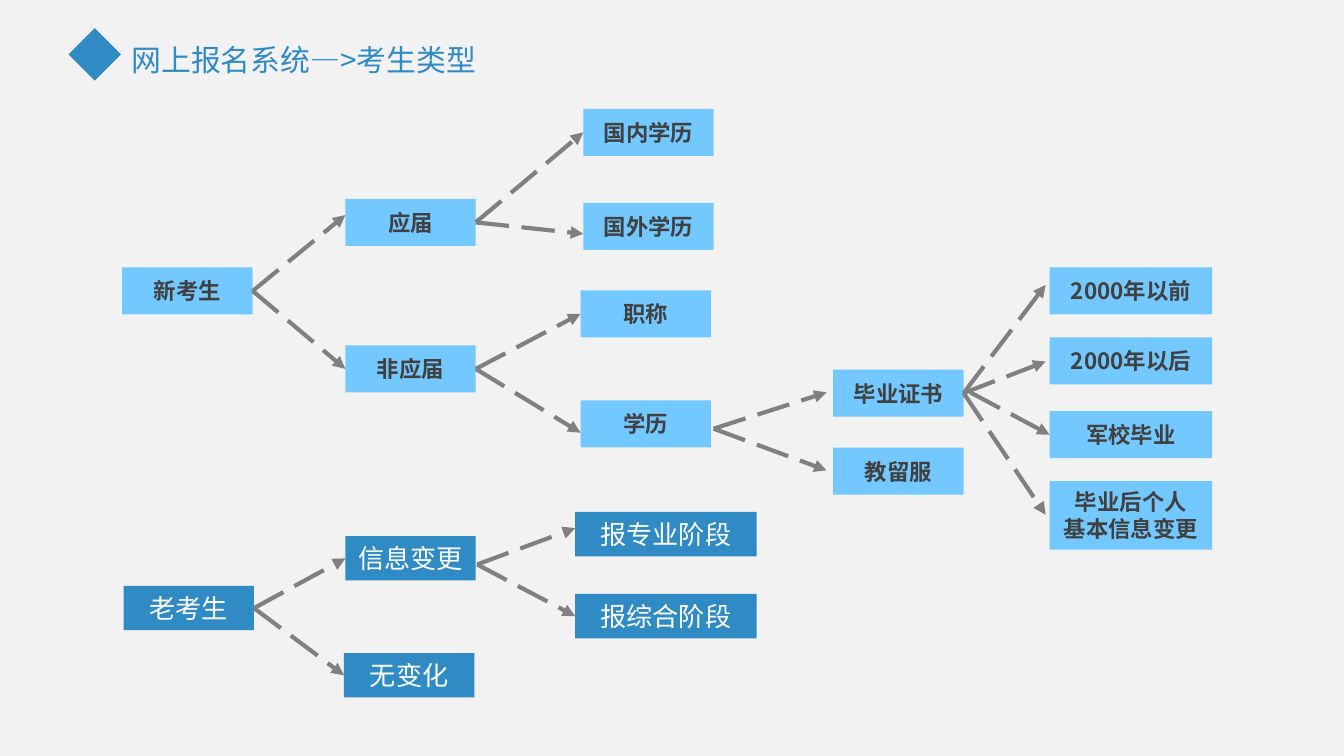
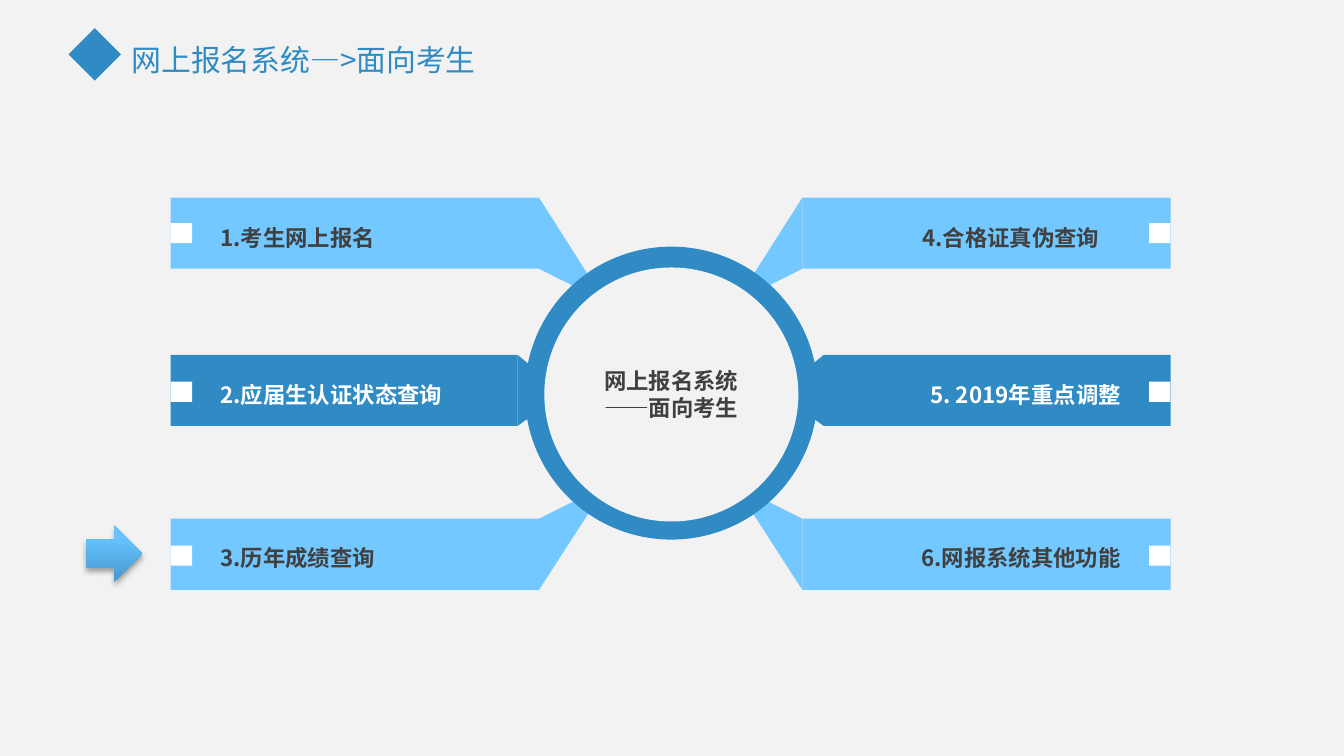
"""Build two slides on the online registration system: candidate types and functions."""
from copy import deepcopy

from lxml.etree import SubElement
from pptx import Presentation
from pptx.dml.color import RGBColor
from pptx.enum.dml import MSO_LINE
from pptx.enum.shapes import MSO_CONNECTOR, MSO_SHAPE
from pptx.enum.text import MSO_ANCHOR, MSO_AUTO_SIZE, PP_ALIGN
from pptx.oxml.ns import qn
from pptx.util import Pt

PX = 4572
DARK_BLUE = RGBColor(0x30, 0x8B, 0xC4)
LIGHT_BLUE = RGBColor(0x73, 0xC8, 0xFF)
PALE = RGBColor(0xF2, 0xF2, 0xF2)
INK = RGBColor(0x40, 0x40, 0x40)
GREY = RGBColor(0x80, 0x80, 0x80)
WHITE = RGBColor(0xFF, 0xFF, 0xFF)
ARROW_BOTTOM = RGBColor(0x46, 0x99, 0xCE)
ARROW_MIDDLE = RGBColor(0x68, 0xC3, 0xFF)
ARROW_TOP = RGBColor(0x69, 0xC4, 0xFF)
CJK = "Noto Sans CJK SC"
LATIN = "Calibri"


def add_box(shapes, kind, box, color):
    shape = shapes.add_shape(kind, *(PX * value for value in box))
    shape.fill.solid()
    shape.fill.fore_color.rgb = color
    shape.line.fill.background()
    shape.shadow.inherit = False
    return shape


def write(shape, text, color, size=12, bold=True, font=CJK, align=PP_ALIGN.CENTER,
          anchor=MSO_ANCHOR.MIDDLE, insets=(14, 8, 14, 8), before=0):
    frame = shape.text_frame
    frame.word_wrap = True
    frame.vertical_anchor = anchor
    (frame.margin_left, frame.margin_top,
     frame.margin_right, frame.margin_bottom) = (PX * inset for inset in insets)
    for index, line in enumerate(text.split("\n")):
        paragraph = frame.add_paragraph() if index else frame.paragraphs[0]
        paragraph.alignment = align
        paragraph.space_before = Pt(before)
        run = paragraph.add_run()
        run.text = line
        run.font.name = font
        run.font.size = Pt(size)
        run.font.bold = bold
        run.font.color.rgb = color
        SubElement(run.font._element, qn("a:ea"), typeface=CJK)


presentation = Presentation()
presentation.slide_width = 2000 * PX
presentation.slide_height = 1125 * PX

slides = []
for title, title_width in [("网上报名系统—>考生类型", 630), ("网上报名系统—>面向考生", 786)]:
    slide = presentation.slides.add_slide(presentation.slide_layouts[6])
    slide.background.fill.solid()
    slide.background.fill.fore_color.rgb = PALE
    add_box(slide.shapes, MSO_SHAPE.DIAMOND, (102, 42, 78, 78), DARK_BLUE)
    title_box = slide.shapes.add_textbox(182 * PX, 54 * PX, title_width * PX, 68 * PX)
    write(title_box, title, DARK_BLUE, size=16, bold=False, align=PP_ALIGN.LEFT,
          anchor=MSO_ANCHOR.TOP)
    title_box.text_frame.auto_size = MSO_AUTO_SIZE.SHAPE_TO_FIT_TEXT
    slides.append(slide)
types_slide, functions_slide = slides

new_candidate_nodes = [
    ("新考生", 182, 398, 194, 70),
    ("应届", 514, 296, 194, 70),
    ("非应届", 514, 514, 194, 70),
    ("国内学历", 868, 162, 194, 70),
    ("国外学历", 868, 302, 194, 70),
    ("职称", 864, 432, 194, 70),
    ("学历", 864, 596, 194, 70),
    ("毕业证书", 1240, 550, 194, 70),
    ("教留服", 1240, 666, 194, 70),
    ("2000年以前", 1562, 398, 242, 70),
    ("2000年以后", 1562, 502, 242, 70),
    ("军校毕业", 1562, 612, 242, 70),
    ("毕业后个人\n基本信息变更", 1562, 716, 242, 102),
]
returning_candidate_nodes = [
    ("老考生", 184, 872, 194, 66),
    ("信息变更", 514, 798, 194, 66),
    ("无变化", 512, 972, 194, 66),
    ("报专业阶段", 856, 762, 270, 66),
    ("报综合阶段", 856, 884, 270, 66),
]
nodes = []
for text, *box in new_candidate_nodes:
    node = add_box(types_slide.shapes, MSO_SHAPE.RECTANGLE, box, LIGHT_BLUE)
    write(node, text, INK)
    nodes.append(node)
for text, *box in returning_candidate_nodes:
    node = add_box(types_slide.shapes, MSO_SHAPE.RECTANGLE, box, DARK_BLUE)
    write(node, text, WHITE, size=14, bold=False, font=LATIN)
    nodes.append(node)

branches = [
    ((376, 432), [(514, 320)]),
    ((380, 432), [(512, 550)]),
    ((710, 330), [(868, 196), (868, 348)]),
    ((710, 550), [(864, 468), (864, 644)]),
    ((1062, 638), [(1230, 584), (1230, 700)]),
    ((1434, 584), [(1556, 424), (1556, 538), (1556, 766)]),
    ((1444, 584), [(1562, 646)]),
    ((380, 904), [(512, 830), (512, 1004)]),
    ((710, 840), [(856, 786), (856, 918)]),
]
NEAR = 4 * PX
for start, ends in branches:
    for end in ends:
        x1, y1, x2, y2 = (PX * value for value in start + end)
        arrow = types_slide.shapes.add_connector(MSO_CONNECTOR.STRAIGHT, x1, y1, x2, y2)
        arrow.line.color.rgb = GREY
        arrow.line.width = Pt(2.25)
        arrow.line.dash_style = MSO_LINE.LONG_DASH
        SubElement(arrow.line._get_or_add_ln(), qn("a:tailEnd"), type="triangle")
        SubElement(arrow._element.spPr, qn("a:effectLst"))
        for node in nodes:
            middle = node.top + node.height // 2
            if abs(node.left + node.width - x1) <= NEAR and abs(middle - y1) <= NEAR:
                arrow.begin_connect(node, 3)
            if abs(node.left - x2) <= NEAR and abs(middle - y2) <= NEAR:
                arrow.end_connect(node, 1)

MIRROR = 1996
OUTER, BAND_HEIGHT = 254, 106
rows = [
    (294, 802, [(886, 426), (874, 436)], 332, 324, LIGHT_BLUE, INK,
     [("1.考生网上报名", 428, 0), ("4.合格证真伪查询", 480, 32)]),
    (528, 770, [(826, 574), (826, 594)], 568, 558, DARK_BLUE, WHITE,
     [("2.应届生认证状态查询", 428, 0), ("5. 2019年重点调整", 428, 0)]),
    (772, 802, [(874, 736), (886, 748)], 812, 800, LIGHT_BLUE, INK,
     [("3.历年成绩查询", 428, 0), ("6.网报系统其他功能", 428, 0)]),
]
for top, inner, tips, square_top, label_top, color, text_color, labels in rows:
    for on_right, (text, label_width, right_inset) in enumerate(labels):
        band_left, square_left, label_left = (
            MIRROR - OUTER - width if on_right and edge == OUTER else
            MIRROR - edge - width if on_right else edge
            for edge, width in [(OUTER, inner - OUTER), (OUTER, 32), (328, label_width)])
        band = functions_slide.shapes.add_group_shape()
        add_box(band.shapes, MSO_SHAPE.RECTANGLE,
                (band_left, top, inner - OUTER, BAND_HEIGHT), color)
        points = [(MIRROR - x if on_right else x, y)
                  for x, y in [(inner, top), *tips, (inner, top + BAND_HEIGHT)]]
        builder = band.shapes.build_freeform(*points[0], scale=PX)
        builder.add_line_segments(points[1:])
        wedge = builder.convert_to_shape()
        wedge.fill.solid()
        wedge.fill.fore_color.rgb = color
        wedge.line.fill.background()
        wedge.shadow.inherit = False
        add_box(functions_slide.shapes, MSO_SHAPE.RECTANGLE,
                (square_left, square_top, 32, 30), WHITE)
        label = functions_slide.shapes.add_textbox(
            label_left * PX, label_top * PX, label_width * PX, 62 * PX)
        write(label, text, text_color, anchor=MSO_ANCHOR.TOP, before=2.4,
              align=PP_ALIGN.RIGHT if on_right else PP_ALIGN.LEFT,
              insets=(0, 10, right_inset, 10))

hub = functions_slide.shapes.add_group_shape()
add_box(hub.shapes, MSO_SHAPE.OVAL, (781, 367, 436, 436), DARK_BLUE)
center = add_box(hub.shapes, MSO_SHAPE.OVAL, (810, 398, 378, 378), PALE)
write(center, "网上报名系统\n——面向考生", INK, insets=(20, 10, 20, 10))

pointer = add_box(functions_slide.shapes, MSO_SHAPE.RIGHT_ARROW, (128, 782, 84, 84), ARROW_TOP)
pointer.fill.gradient()
pointer.fill.gradient_angle = 90
stop_list = pointer._element.spPr.find(".//" + qn("a:gsLst"))
stop_list.append(deepcopy(stop_list[-1]))
stops = [(0, ARROW_BOTTOM), (0.8, ARROW_MIDDLE), (1, ARROW_TOP)]
for stop, (position, color) in zip(pointer.fill.gradient_stops, stops):
    stop.position = position
    stop.color.rgb = color
effects = pointer._element.spPr.find(qn("a:effectLst"))
shadow = SubElement(effects, qn("a:outerShdw"), blurRad=str(Pt(3.1)), dist=str(Pt(1.8)),
                    dir="5400000", rotWithShape="0")
shadow_color = SubElement(shadow, qn("a:srgbClr"), val="000000")
SubElement(shadow_color, qn("a:alpha"), val="35000")

presentation.save("out.pptx")
